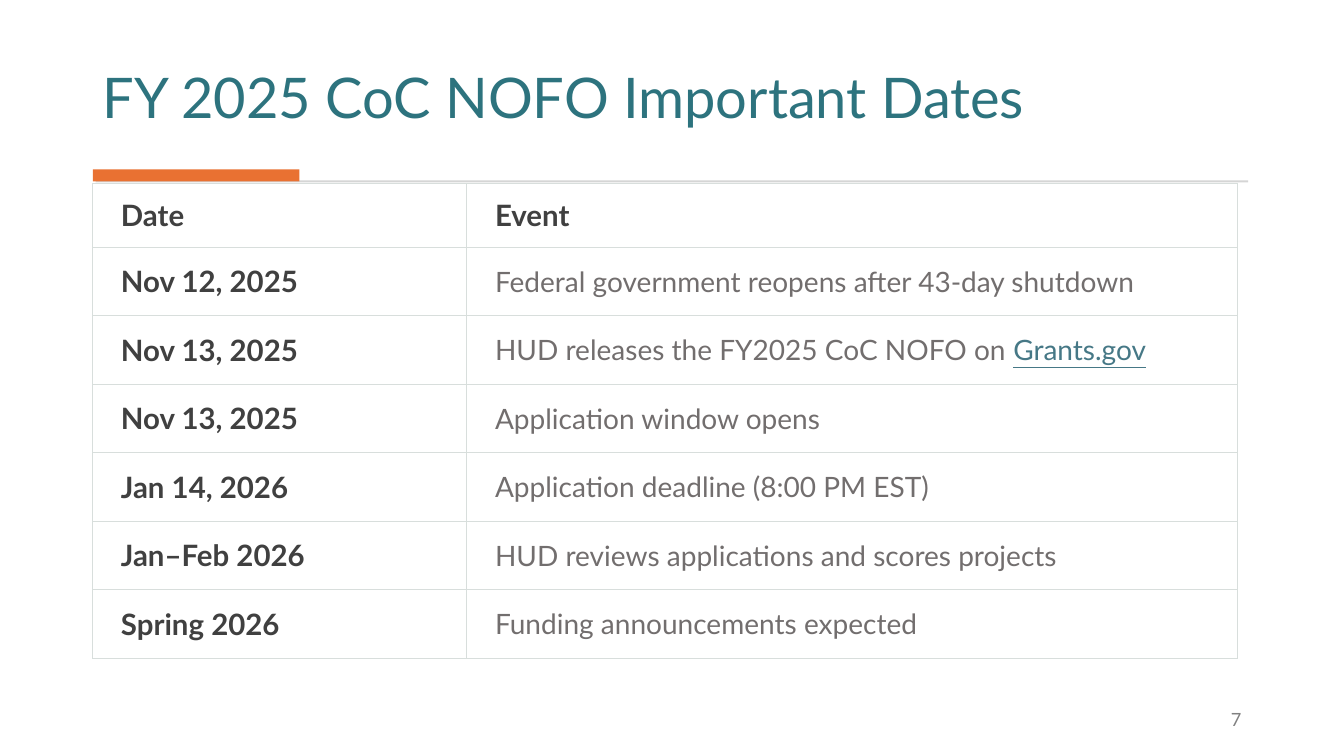
from dataclasses import dataclass

from lxml.etree import SubElement
from pptx import Presentation
from pptx.dml.color import RGBColor as RGB
from pptx.enum.shapes import MSO_SHAPE as SHAPE
from pptx.enum.text import MSO_ANCHOR as ANCHOR, PP_ALIGN as ALIGN
from pptx.oxml.ns import qn
from pptx.util import Inches, Pt


@dataclass(frozen=True)
class Theme:
    font: str = "Lato"
    teal: str = "2D737E"
    orange: str = "E97132"
    rule: str = "D5D5D5"
    border: str = "D8DEDC"
    dark: str = "404040"
    body: str = "726E6E"
    link: str = "467886"
    number: str = "808080"
    white: str = "FFFFFF"
    title_size: int = 40
    head_size: int = 21
    body_size: int = 20
    number_size: int = 13


theme = Theme()


def write(par, text, size, color, bold=False, underline=False):
    run = par.add_run()
    run.text = text
    font = run.font
    font.name, font.size = theme.font, Pt(size)
    font.bold, font.underline = bold, underline
    font.color.rgb = RGB.from_string(color)


def add_box(left, top, width, height, inset):
    box = slide.shapes.add_textbox(Inches(left), Inches(top), Inches(width), Inches(height))
    frame = box.text_frame
    frame.word_wrap = True
    (frame.margin_left, frame.margin_top,
     frame.margin_right, frame.margin_bottom) = [Inches(x) for x in inset]
    return frame


deck = Presentation()
deck.slide_width, deck.slide_height = Inches(13.33), Inches(7.5)
slide = deck.slides.add_slide(deck.slide_layouts[6])

# Title
frame = add_box(0.92, 0.28, 11.49, 1.11, (0.1, 0.05, 0.1, 0.1))
frame.vertical_anchor = ANCHOR.BOTTOM
par = frame.paragraphs[0]
par.space_before, par.space_after = Pt(14), Pt(4)
write(par, "FY 2025 CoC NOFO Important Dates", theme.title_size, theme.teal)

# Grey rule and orange accent
for left, top, width, height, color in [
    (0.95, 1.79, 11.43, 0.02, theme.rule),
    (0.92, 1.68, 2.05, 0.12, theme.orange),
]:
    bar = slide.shapes.add_shape(
        SHAPE.RECTANGLE, Inches(left), Inches(top), Inches(width), Inches(height))
    bar.shadow.inherit = False
    bar.fill.solid()
    bar.fill.fore_color.rgb = RGB.from_string(color)
    bar.line.fill.background()

# Slide number
par = add_box(9.7, 6.95, 2.71, 0.4, (0.1, 0.1, 0.1, 0.1)).paragraphs[0]
par.alignment, par.line_spacing, par.space_after = ALIGN.RIGHT, 0.9, Pt(6)
write(par, "7", theme.number_size, theme.number)

# Dates table: an event is followed by its link, if it has one
dates = [
    ("Date", "Event", ""),
    ("Nov 12, 2025", "Federal government reopens after 43-day shutdown", ""),
    ("Nov 13, 2025", "HUD releases the FY2025 CoC NOFO on ", "Grants.gov"),
    ("Nov 13, 2025", "Application window opens", ""),
    ("Jan 14, 2026", "Application deadline (8:00 PM EST)", ""),
    ("Jan–Feb 2026", "HUD reviews applications and scores projects", ""),
    ("Spring 2026", "Funding announcements expected", ""),
]
table = slide.shapes.add_table(
    len(dates), 2, Inches(0.92), Inches(1.82), Inches(11.35), Inches(4.71)).table
table.first_row = table.horz_banding = False
for col, width in zip(table.columns, (3.71, 7.64)):
    col.width = Inches(width)

for row, (date, event, link) in enumerate(dates):
    table.rows[row].height = Inches(0.68 if row else 0.63)
    for col, text in enumerate((date, event)):
        cell = table.cell(row, col)
        cell.vertical_anchor = ANCHOR.MIDDLE
        cell.margin_left, cell.margin_right = Inches(0.28), Inches(0.13)
        cell.margin_top = cell.margin_bottom = Inches(0.14)

        # Borders come before the fill in the cell properties
        props = cell._tc.get_or_add_tcPr()
        for side in ("a:lnL", "a:lnR", "a:lnT", "a:lnB"):
            line = SubElement(props, qn(side), w=str(Pt(0.75)))
            paint = SubElement(line, qn("a:solidFill"))
            SubElement(paint, qn("a:srgbClr"), val=theme.border)
        cell.fill.solid()
        cell.fill.fore_color.rgb = RGB.from_string(theme.white)

        par = cell.text_frame.paragraphs[0]
        if row == 0 or col == 0:
            write(par, text, theme.head_size, theme.dark, bold=True)
        else:
            write(par, text, theme.body_size, theme.body)
            if link:
                write(par, link, theme.body_size, theme.link, underline=True)

deck.save("out.pptx")
